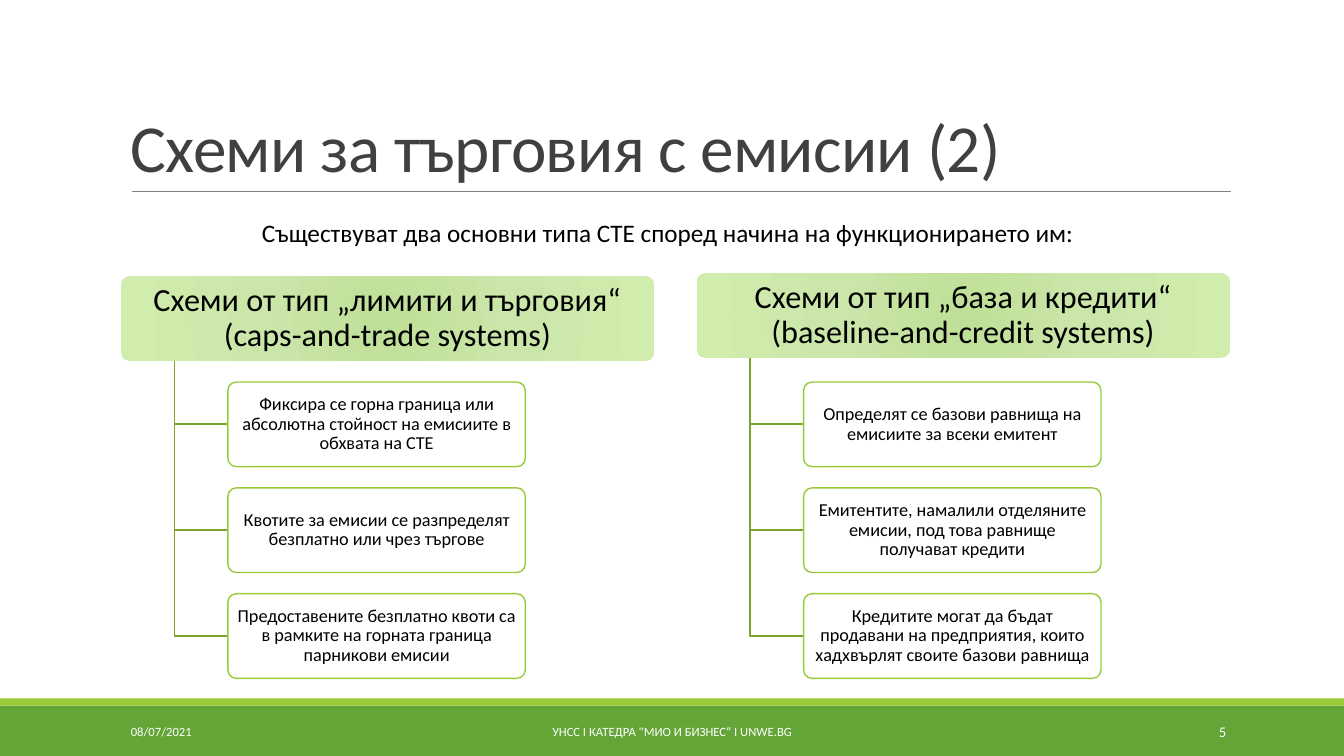
"""Build the slide on two types of emissions trading schemes."""
from dataclasses import dataclass
from typing import Any

from lxml import etree
from pptx import Presentation
from pptx.dml.color import RGBColor
from pptx.enum.shapes import MSO_CONNECTOR, MSO_SHAPE
from pptx.enum.text import MSO_ANCHOR, PP_ALIGN
from pptx.oxml import parse_xml
from pptx.oxml.ns import nsdecls, qn
from pptx.util import Inches, Pt

LEFT, CENTER, RIGHT = PP_ALIGN.LEFT, PP_ALIGN.CENTER, PP_ALIGN.RIGHT
TOP, MIDDLE, BOTTOM = MSO_ANCHOR.TOP, MSO_ANCHOR.MIDDLE, MSO_ANCHOR.BOTTOM
RECTANGLE, ROUNDED = MSO_SHAPE.RECTANGLE, MSO_SHAPE.ROUNDED_RECTANGLE
STRAIGHT = MSO_CONNECTOR.STRAIGHT

FONT = "Calibri"
COLORS = {
    "green": "63A537", "lime": "99CB38", "branch": "7BA32D", "rule": "808080",
    "title": "404040", "black": "000000", "white": "FFFFFF",
}
HEADING_STOPS = {0: "BEDF97", 45: "CAE6A9", 100: "D0EDAE"}

BOX_HEIGHT = 0.84
HEADING_WIDTH = 5.29
ITEM_WIDTH = 2.95
ITEM_TOP = 3.79
ITEM_STEP = 1.05
TRUNK_INDENT = 0.53
ITEM_INDENT = 1.06


@dataclass
class Label:
    text: str
    left: float
    top: float
    width: float
    height: float
    size: float
    color: str = "white"
    align: Any = LEFT
    anchor: Any = MIDDLE
    line_spacing: float = 1.0
    wrap: bool = True
    tracking: int = 0


@dataclass
class Scheme:
    heading: str
    left: float
    top: float
    items: list[str]


LABELS = [
    Label("Схеми за търговия с емисии (2)", 1.2, 0.31, 11, 1.59, 48, "title",
          anchor=BOTTOM, line_spacing=0.85, tracking=-50),
    Label("Съществуват два основни типа СТЕ според начина на функционирането им:",
          2.5, 2.11, 8.4, 0.4, 18, "black", anchor=TOP, wrap=False),
    Label("08/07/2021", 1.2, 7.06, 2.7, 0.4, 9),
    Label("УНСС I КАТЕДРА \"МИО И БИЗНЕС“ I UNWE.BG", 4.03, 7.06, 5.27, 0.4, 9, align=CENTER),
    Label("5", 10.83, 7.06, 1.43, 0.4, 10.5, align=RIGHT),
]

SCHEMES = [
    Scheme("Схеми от тип „лимити и търговия“ (caps-and-trade systems)", 1.2, 2.74, [
        "Фиксира се горна граница или абсолютна стойност на емисиите в обхвата на СТЕ",
        "Квотите за емисии се разпределят безплатно или чрез търгове",
        "Предоставените безплатно квоти са в рамките на горната граница парникови емисии",
    ]),
    Scheme("Схеми от тип „база и кредити“ (baseline-and-credit systems)", 6.91, 2.71, [
        "Определят се базови равнища на емисиите за всеки емитент",
        "Емитентите, намалили отделяните емисии, под това равнище получават кредити",
        "Кредитите могат да бъдат продавани на предприятия, които хадхвърлят своите базови равнища",
    ]),
]


def rgb(name: str) -> RGBColor:
    return RGBColor.from_string(COLORS[name])


def set_format(target: Any, values: dict[str, Any]) -> None:
    for name, value in values.items():
        setattr(target, name, value)


def write_text(box: Any, label: Label, margin_x: float, margin_y: float) -> None:
    frame = box.text_frame
    set_format(frame, {
        "word_wrap": label.wrap, "vertical_anchor": label.anchor,
        "margin_left": Inches(margin_x), "margin_right": Inches(margin_x),
        "margin_top": Inches(margin_y), "margin_bottom": Inches(margin_y),
    })
    para = frame.paragraphs[0]
    set_format(para, {"alignment": label.align, "line_spacing": label.line_spacing})
    span = para.add_run()
    span.text = label.text
    set_format(span.font, {"name": FONT, "size": Pt(label.size)})
    span.font.color.rgb = rgb(label.color)
    if label.tracking:
        span.font._element.set("spc", str(label.tracking))


def add_label(page: Any, label: Label) -> None:
    box = page.shapes.add_textbox(
        Inches(label.left), Inches(label.top), Inches(label.width), Inches(label.height))
    write_text(box, label, 0.1, 0.05)


def add_block(page: Any, kind: Any, left: float, top: float, width: float, height: float,
              color: str) -> Any:
    block = page.shapes.add_shape(kind, Inches(left), Inches(top), Inches(width), Inches(height))
    block.shadow.inherit = False
    block.fill.solid()
    block.fill.fore_color.rgb = rgb(color)
    block.line.fill.background()
    return block


def add_rounded_box(page: Any, label: Label, margin_x: float, margin_y: float) -> Any:
    box = add_block(page, ROUNDED, label.left, label.top, label.width, label.height, "white")
    box.adjustments[0] = 0.1
    write_text(box, label, margin_x, margin_y)
    return box


def add_heading(page: Any, scheme: Scheme) -> None:
    label = Label(scheme.heading, scheme.left, scheme.top, HEADING_WIDTH, BOX_HEIGHT,
                  23, "black", CENTER, line_spacing=0.9)
    box = add_rounded_box(page, label, 0.05, 0.03)
    stops = "".join(
        f'<a:gs pos="{position * 1000}"><a:srgbClr val="{color}"/></a:gs>'
        for position, color in HEADING_STOPS.items())
    gradient = parse_xml(
        f'<a:gradFill {nsdecls("a")} rotWithShape="1"><a:gsLst>{stops}</a:gsLst>'
        '<a:path path="circle"><a:fillToRect l="100000" t="100000" r="100000" b="100000"/>'
        '</a:path></a:gradFill>')
    properties = box._element.spPr
    properties.replace(properties.find(qn("a:solidFill")), gradient)


def add_branch(page: Any, scheme: Scheme, item_top: float) -> None:
    trunk = Inches(scheme.left + TRUNK_INDENT)
    middle = Inches(item_top + BOX_HEIGHT / 2)
    builder = page.shapes.build_freeform(trunk, Inches(scheme.top + BOX_HEIGHT))
    builder.add_line_segments(
        [(trunk, middle), (Inches(scheme.left + ITEM_INDENT), middle)], close=False)
    branch = builder.convert_to_shape()
    branch.shadow.inherit = False
    branch.fill.background()
    branch.line.color.rgb = rgb("branch")
    branch.line.width = Pt(1.25)


def add_item(page: Any, scheme: Scheme, text: str, top: float) -> None:
    label = Label(text, scheme.left + ITEM_INDENT, top, ITEM_WIDTH, BOX_HEIGHT,
                  13, "black", CENTER, line_spacing=0.9)
    box = add_rounded_box(page, label, 0.03, 0.02)
    box.line.color.rgb = rgb("lime")
    box.line.width = Pt(1)
    color = box._element.spPr.find(qn("a:solidFill"))[0]
    etree.SubElement(color, qn("a:alpha")).set("val", "90000")


def add_scheme(page: Any, scheme: Scheme) -> None:
    add_heading(page, scheme)
    for index, text in enumerate(scheme.items):
        top = ITEM_TOP + index * ITEM_STEP
        add_branch(page, scheme, top)
        add_item(page, scheme, text, top)


def add_title_rule(page: Any) -> None:
    rule = page.shapes.add_connector(
        STRAIGHT, Inches(1.31), Inches(1.9), Inches(12.21), Inches(1.9))
    rule.line.color.rgb = rgb("rule")
    rule.line.width = Pt(0.5)
    etree.SubElement(rule._element.spPr, qn("a:effectLst"))


def main() -> None:
    deck = Presentation()
    set_format(deck, {"slide_width": Inches(13.33), "slide_height": Inches(7.5)})
    page = deck.slides.add_slide(deck.slide_layouts[6])
    add_block(page, RECTANGLE, 0, 7, 13.33, 0.5, "green")
    add_block(page, RECTANGLE, 0, 6.93, 13.33, 0.07, "lime")
    add_title_rule(page)
    for scheme in SCHEMES:
        add_scheme(page, scheme)
    for label in LABELS:
        add_label(page, label)
    deck.save("out.pptx")


if __name__ == "__main__":
    main()
